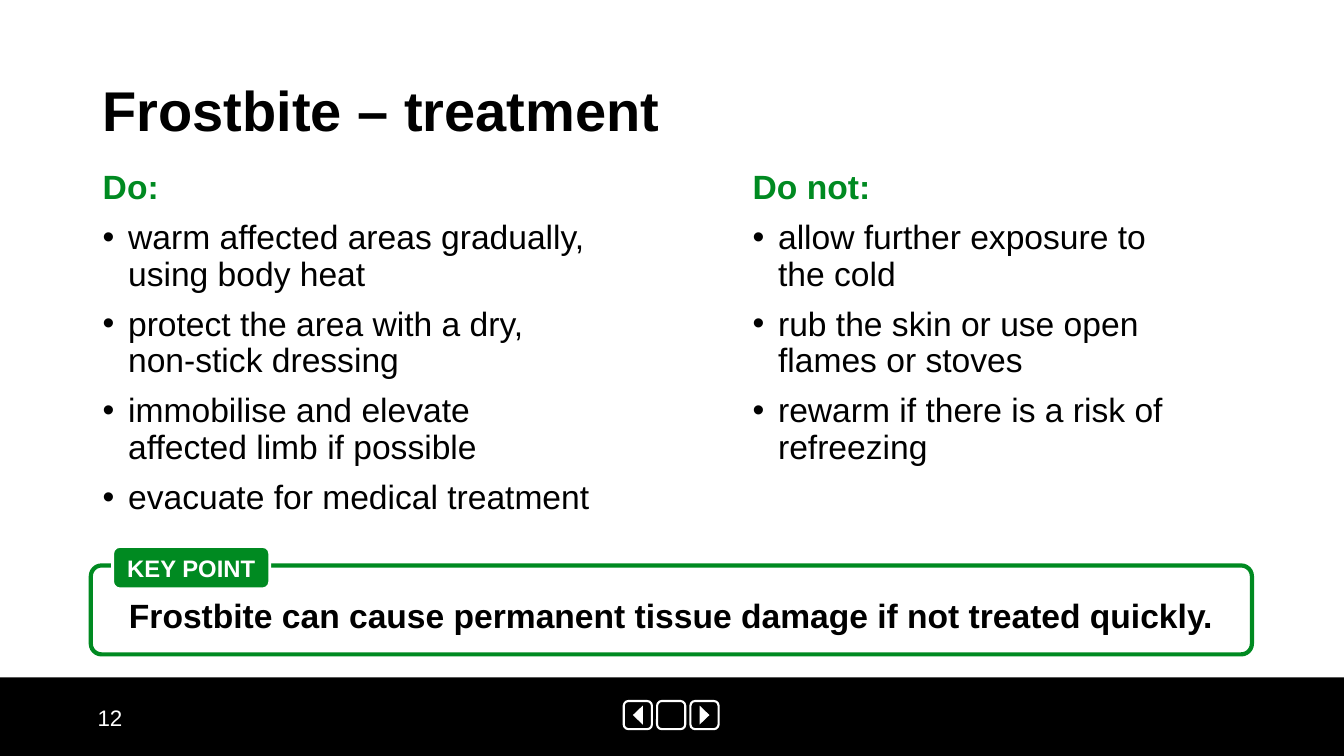
from lxml import etree
from pptx import Presentation
from pptx import util as u
from pptx.dml.color import RGBColor
from pptx.enum import shapes, text
from pptx.oxml.ns import qn

Cm = u.Cm
GREEN, BLACK, WHITE = "008A21", "000000", "FFFFFF"
FONT = "Arial"
SLIDE_W, SLIDE_H = 33.87, 19.05

TITLE = "Frostbite – treatment"
ADVICE = [
    (2.34, 12.83, "Do:", [
        "warm affected areas gradually, using body heat",
        "protect the area with a dry, non-stick dressing",
        "immobilise and elevate affected limb if possible",
        "evacuate for medical treatment",
    ]),
    (18.72, 11.66, "Do not:", [
        "allow further exposure to the cold",
        "rub the skin or use open flames or stoves",
        "rewarm if there is a risk of refreezing",
    ]),
]
KEY_LABEL = "KEY POINT"
KEY_MESSAGE = "Frostbite can cause permanent tissue damage if not treated quickly."
PAGE = "12"
BUTTON_ARROWS = [-1, 0, 1]

ADVICE_TOP, ADVICE_H = 4.17, 9.58
FOOTER_TOP = 17.07
BUTTON, BUTTON_PITCH, BUTTON_MID = 0.71, 0.84, 18.02
ARROW_W, ARROW_H = 0.25, 0.48


def colour(hex_code):
    return RGBColor.from_string(hex_code)


def style(paragraph, size, hex_code, bold=False):
    font = paragraph.font
    font.name, font.size, font.bold = FONT, u.Pt(size), bold
    font.color.rgb = colour(hex_code)


def add_text(left, top, width, height, lines, anchor=text.MSO_ANCHOR.TOP, spacing=0.9):
    frame = slide.shapes.add_textbox(Cm(left), Cm(top), Cm(width), Cm(height)).text_frame
    frame.word_wrap = True
    frame.vertical_anchor = anchor
    for i, (words, size, hex_code, bold, bulleted) in enumerate(lines):
        paragraph = frame.paragraphs[0] if i == 0 else frame.add_paragraph()
        paragraph.text = words
        paragraph.line_spacing = spacing
        if i:
            paragraph.space_before = u.Pt(10)
        if bulleted:
            add_bullet(paragraph)
        style(paragraph, size, hex_code, bold)


def add_bullet(paragraph):
    props = paragraph._p.get_or_add_pPr()
    indent = Cm(0.64)
    props.set("marL", str(indent))
    props.set("indent", str(-indent))
    etree.SubElement(props, qn("a:buFont")).set("typeface", FONT)
    etree.SubElement(props, qn("a:buChar")).set("char", "•")


def paint(shape, fill, line=None, line_pt=0):
    shape.shadow.inherit = False
    shape.fill.solid()
    shape.fill.fore_color.rgb = colour(fill)
    if line:
        shape.line.color.rgb = colour(line)
        shape.line.width = u.Pt(line_pt)
    else:
        shape.line.fill.background()


def add_box(left, top, width, height, fill, line=None, line_pt=0, corner=None):
    kind = shapes.MSO_SHAPE.RECTANGLE if corner is None else shapes.MSO_SHAPE.ROUNDED_RECTANGLE
    box = slide.shapes.add_shape(kind, Cm(left), Cm(top), Cm(width), Cm(height))
    if corner is not None:
        box.adjustments[0] = corner
    paint(box, fill, line, line_pt)
    return box


def add_button(mid_x, direction):
    add_box(mid_x - BUTTON / 2, BUTTON_MID - BUTTON / 2, BUTTON, BUTTON,
            BLACK, WHITE, 1.5, corner=0.17)
    if direction:
        tip = mid_x + direction * ARROW_W / 2
        base = mid_x - direction * ARROW_W / 2
        top, bottom = BUTTON_MID - ARROW_H / 2, BUTTON_MID + ARROW_H / 2
        outline = slide.shapes.build_freeform(Cm(base), Cm(top))
        outline.add_line_segments([(Cm(tip), Cm(BUTTON_MID)), (Cm(base), Cm(bottom))])
        paint(outline.convert_to_shape(), WHITE)


deck = Presentation()
deck.slide_width, deck.slide_height = Cm(SLIDE_W), Cm(SLIDE_H)
slide = deck.slides.add_slide(deck.slide_layouts[6])

add_box(0, FOOTER_TOP, SLIDE_W, SLIDE_H - FOOTER_TOP, BLACK)
for arrow in BUTTON_ARROWS:
    add_button(SLIDE_W / 2 - 0.02 + arrow * BUTTON_PITCH, arrow)
add_text(2.21, 17.63, 7.62, 1.02, [(PAGE, 16, WHITE, False, False)], spacing=1.0)

add_text(2.34, 1.02, 29.21, 3.68, [(TITLE, 40, BLACK, True, False)],
         anchor=text.MSO_ANCHOR.MIDDLE)
for left, width, heading, points in ADVICE:
    lines = [(heading, 24, GREEN, True, False)]
    lines += [(point, 24, BLACK, False, True) for point in points]
    add_text(left, ADVICE_TOP, width, ADVICE_H, lines)

add_box(2.29, 14.25, 29.26, 2.24, WHITE, GREEN, 3, corner=0.12)
key_tab = add_box(2.84, 13.77, 3.96, 1.07, GREEN, WHITE, 2, corner=0.17)
key_frame = key_tab.text_frame
key_frame.word_wrap = False
key_frame.vertical_anchor = text.MSO_ANCHOR.MIDDLE
key_text = key_frame.paragraphs[0]
key_text.text = KEY_LABEL
key_text.alignment = text.PP_ALIGN.CENTER
style(key_text, 17, WHITE, True)
add_text(3, 14.99, 28.04, 1.3, [(KEY_MESSAGE, 24, BLACK, True, False)])

deck.save("out.pptx")
